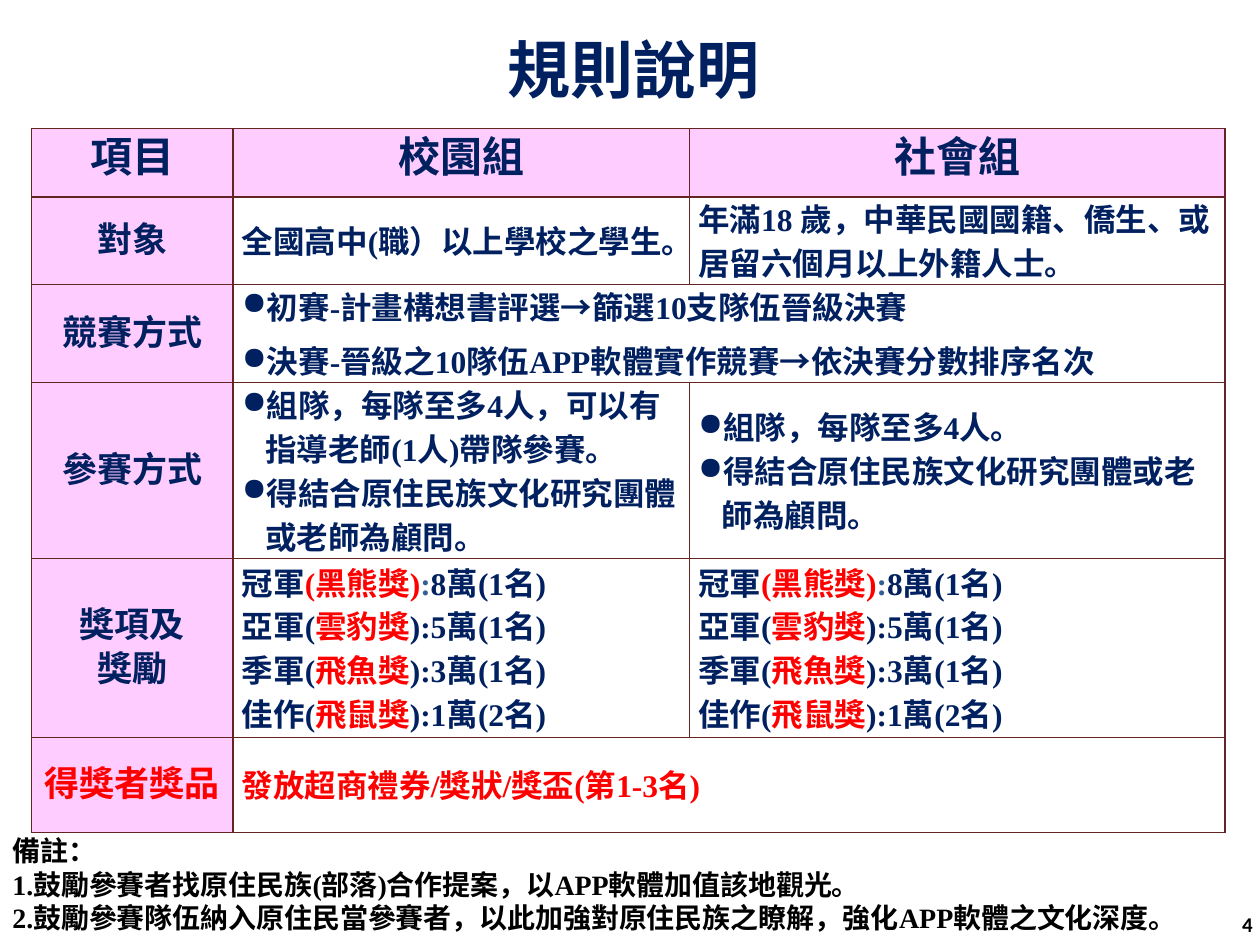
from dataclasses import dataclass

from lxml import etree
from pptx import Presentation
from pptx.dml.color import RGBColor
from pptx.enum.text import MSO_ANCHOR, MSO_AUTO_SIZE, PP_ALIGN
from pptx.oxml.ns import qn
from pptx.slide import Slide
from pptx.table import Table, _Cell
from pptx.text.text import TextFrame, _Paragraph
from pptx.util import Pt

LEFT, CENTER, RIGHT = PP_ALIGN.LEFT, PP_ALIGN.CENTER, PP_ALIGN.RIGHT
MIDDLE = MSO_ANCHOR.MIDDLE
GROW, FIXED = MSO_AUTO_SIZE.SHAPE_TO_FIT_TEXT, MSO_AUTO_SIZE.NONE


@dataclass(frozen=True)
class Theme:
    navy: str = "002060"
    red: str = "FF0000"
    blue: str = "376092"
    black: str = "000000"
    white: str = "FFFFFF"
    pink: str = "FFCCFF"
    border: str = "632523"
    font: str = "Times New Roman"
    number_font: str = "Calibri"
    title: int = 36
    header: int = 24
    label: int = 20
    body: int = 18
    note: int = 16
    number: int = 12
    leading: int = 25
    hang: float = 13.5


T = Theme()


@dataclass(frozen=True)
class Run:
    text: str
    color: str = ""


@dataclass(frozen=True)
class Para:
    runs: tuple[Run, ...]
    bullet: bool = False
    hang: float = 0
    before: float = 0


@dataclass(frozen=True)
class Row:
    height: float
    label: tuple[Para, ...]
    cells: tuple[tuple[Para, ...], ...]
    color: str = T.navy
    fill: str = T.white


def plain(*lines: str) -> tuple[Para, ...]:
    return tuple(Para((Run(line),)) for line in lines)


def item(text: str, hang: float = 0, before: float = 0) -> Para:
    return Para((Run(text),), True, hang, before)


def prize(rank: str, name: str, amount: str) -> Para:
    return Para((Run(f"{rank}("), Run(name, T.red), Run(f"):{amount}")))


ADVISER = item("得結合原住民族文化研究團體或老師為顧問。", T.hang)
PRIZES = (
    Para((Run("冠軍"), Run("(黑熊獎)", T.red), Run(":", T.blue), Run("8萬(1名)"))),
    prize("亞軍", "雲豹獎", "5萬(1名)"),
    prize("季軍", "飛魚獎", "3萬(1名)"),
    prize("佳作", "飛鼠獎", "1萬(2名)"),
)
HEADERS = ("項目", "校園組", "社會組")
HEADER_HEIGHT = 39.2
COLUMNS = (115.2, 260.8, 306)
ROWS = (
    Row(50, plain("對象"), (
        plain("全國高中(職）以上學校之學生。"),
        plain("年滿18 歲，中華民國國籍、僑生、或居留六個月以上外籍人士。"),
    ), fill=""),
    Row(56, plain("競賽方式"), ((
        item("初賽-計畫構想書評選→篩選10支隊伍晉級決賽"),
        item("決賽-晉級之10隊伍APP軟體實作競賽→依決賽分數排序名次", before=6),
    ),), fill=""),
    Row(100.5, plain("參賽方式"), (
        (item("組隊，每隊至多4人，可以有指導老師(1人)帶隊參賽。", T.hang), ADVISER),
        (item("組隊，每隊至多4人。"), ADVISER),
    )),
    Row(102.2, plain("獎項及", "獎勵"), (PRIZES, PRIZES)),
    Row(54.5, plain("得獎者獎品"),
        (plain("發放超商禮券/獎狀/獎盃(第1-3名)"),), T.red),
)


def add_bullet(p: _Paragraph, hang: float) -> None:
    pPr = p._p.get_or_add_pPr()
    pPr.set("marL", str(Pt(hang)))
    pPr.set("indent", str(-Pt(hang)))
    etree.SubElement(pPr, qn("a:buChar")).set("char", "●")


def write(tf: TextFrame, paras: tuple[Para, ...], *, size: int, color: str = T.navy,
          align: PP_ALIGN = LEFT, font: str = T.font, leading: float = 0) -> None:
    for i, para in enumerate(paras):
        p = tf.paragraphs[0] if i == 0 else tf.add_paragraph()
        p.alignment = align
        if leading:
            p.line_spacing = Pt(leading)
        if para.before:
            p.space_before = Pt(para.before)
        if para.bullet:
            add_bullet(p, para.hang)
        for run in para.runs:
            r = p.add_run()
            r.text = run.text
            r.font.name = font
            r.font.size = Pt(size)
            r.font.bold = True
            r.font.color.rgb = RGBColor.from_string(run.color or color)


def add_text(s: Slide, box: tuple[float, ...], paras: tuple[Para, ...], *,
             wrap: bool = True, **fmt) -> None:
    tf = s.shapes.add_textbox(*map(Pt, box)).text_frame
    tf.word_wrap = wrap
    tf.auto_size = FIXED if wrap else GROW
    tf.vertical_anchor = MIDDLE
    write(tf, paras, **fmt)


def style_cell(cell: _Cell, fill: str) -> None:
    cell.vertical_anchor = MIDDLE
    cell.margin_left = cell.margin_right = Pt(5)
    cell.margin_top = cell.margin_bottom = Pt(0)
    tcPr = cell._tc.get_or_add_tcPr()
    for side in ("lnL", "lnR", "lnT", "lnB"):
        ln = etree.SubElement(tcPr, qn(f"a:{side}"), w=str(Pt(1)))
        solid = etree.SubElement(ln, qn("a:solidFill"))
        etree.SubElement(solid, qn("a:srgbClr"), val=T.border)
    if fill:
        cell.fill.solid()
        cell.fill.fore_color.rgb = RGBColor.from_string(fill)
    else:
        cell.fill.background()


def fill_row(table: Table, index: int, row: Row) -> None:
    table.rows[index].height = Pt(row.height)
    for col in range(len(COLUMNS)):
        style_cell(table.cell(index, col), row.fill if col else T.pink)
    if len(row.cells) == 1:
        table.cell(index, 1).merge(table.cell(index, 2))
    write(table.cell(index, 0).text_frame, row.label, size=T.label,
          color=row.color, align=CENTER, leading=T.leading)
    for col, paras in enumerate(row.cells, 1):
        write(table.cell(index, col).text_frame, paras, size=T.body,
              color=row.color, leading=T.leading)


def add_rules(s: Slide, left: float, top: float) -> None:
    height = HEADER_HEIGHT + sum(row.height for row in ROWS)
    table = s.shapes.add_table(len(ROWS) + 1, len(COLUMNS), Pt(left), Pt(top),
                               Pt(sum(COLUMNS)), Pt(height)).table
    table.first_row = table.horz_banding = False
    table.rows[0].height = Pt(HEADER_HEIGHT)
    for col, (width, header) in enumerate(zip(COLUMNS, HEADERS)):
        table.columns[col].width = Pt(width)
        cell = table.cell(0, col)
        style_cell(cell, T.pink)
        write(cell.text_frame, plain(header), size=T.header, align=CENTER,
              leading=T.leading)
    for index, row in enumerate(ROWS, 1):
        fill_row(table, index, row)


def main() -> None:
    prs = Presentation()
    prs.slide_width, prs.slide_height = Pt(720), Pt(540)
    s = prs.slides.add_slide(prs.slide_layouts[6])
    add_text(s, (27.4, 5.8, 669.6, 67), plain("規則說明"), size=T.title, align=CENTER)
    add_text(s, (555, 513.4, 168, 28.8), plain("4"), size=T.number,
             color=T.black, align=RIGHT, font=T.number_font)
    add_rules(s, 18, 73.4)
    add_text(s, (0, 472.3, 700, 65.5), plain(
        "備註：",
        "1.鼓勵參賽者找原住民族(部落)合作提案，以APP軟體加值該地觀光。",
        "2.鼓勵參賽隊伍納入原住民當參賽者，以此加強對原住民族之瞭解，強化APP軟體之文化深度。",
    ), wrap=False, size=T.note, color=T.black)
    prs.save("out.pptx")


if __name__ == "__main__":
    main()
